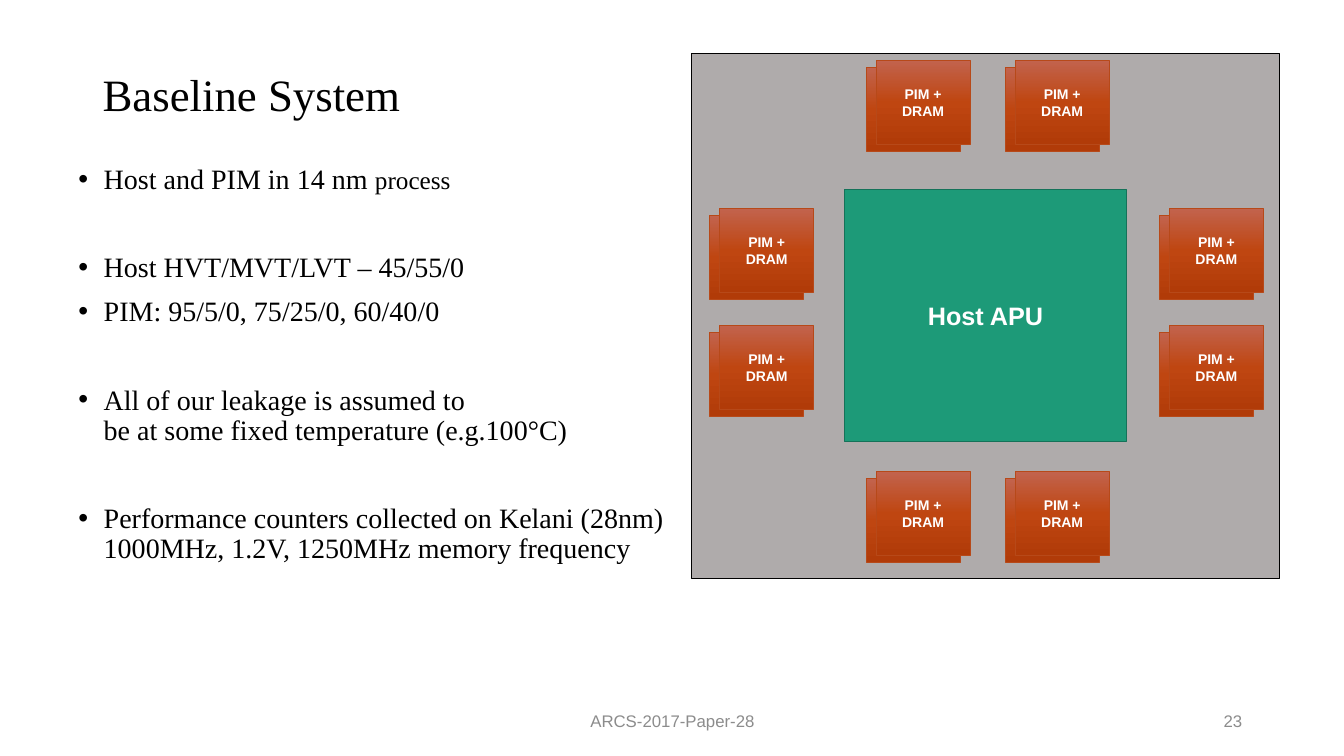
from copy import deepcopy
from itertools import product

from pptx import Presentation
from pptx.dml.color import RGBColor
from pptx.enum.shapes import MSO_SHAPE
from pptx.enum.text import MSO_ANCHOR, PP_ALIGN
from pptx.oxml.ns import qn
from pptx.oxml.xmlchemy import OxmlElement
from pptx.util import Inches, Pt

BLACK = RGBColor(0x00, 0x00, 0x00)
WHITE = RGBColor(0xFF, 0xFF, 0xFF)
GRAY = RGBColor(0x8C, 0x8C, 0x8C)
PANEL = RGBColor(0xAF, 0xAB, 0xAB)
GREEN = RGBColor(0x1D, 0x9A, 0x78)
PINE = RGBColor(0x15, 0x72, 0x59)
RUST = RGBColor(0xB7, 0x49, 0x19)
FADE = [
    (0, RGBColor(0xC2, 0x63, 0x4D)),
    (0.5, RGBColor(0xBF, 0x46, 0x11)),
    (1, RGBColor(0xB1, 0x3B, 0x08)),
]
SERIF, SANS = "Times New Roman", "Arial"
PAGE = (0, 0, Inches(13.33), Inches(7.5))
GAP, BREAK = 10, 41.4  # space before a bullet, and before a new group

# Each bullet: space before, then lines of (text, size) runs
BULLETS = [
    (GAP, [[("Host and PIM in 14 nm ", 20), ("process", 18)]]),
    (BREAK, [[("Host HVT/MVT/LVT – 45/55/0", 20)]]),
    (GAP, [[("PIM: 95/5/0, 75/25/0, 60/40/0", 20)]]),
    (BREAK, [[("All of our leakage is assumed to", 20)],
             [("be at some fixed temperature (e.g.100°C)", 20)]]),
    (BREAK, [[("Performance counters collected on Kelani (28nm)", 20)],
             [("1000MHz, 1.2V, 1250MHz memory frequency", 20)]]),
]

# Card corners in percent of the panel
CARDS = [
    *product((31.4, 55.06), (1.34, 79.65)),
    *product((4.8, 81.3), (29.56, 51.82)),
]
CARD_W, CARD_H = 15.95, 15.93
SHIFT_X, SHIFT_Y = -1.7, 1.34


def part(box, x, y, w, h):
    """Return the part of a box given in percent of its size."""
    left, top, width, height = box
    return (int(left + width * x / 100), int(top + height * y / 100),
            int(width * w / 100), int(height * h / 100))


def add_run(para, text, size, font, color, bold=False):
    run = para.add_run()
    run.text = text
    run.font.size = Pt(size)
    run.font.name = font
    run.font.bold = bold
    run.font.color.rgb = color


def add_box(slide, box, anchor=MSO_ANCHOR.MIDDLE):
    """Add a wrapping text box and return its frame."""
    frame = slide.shapes.add_textbox(*box).text_frame
    frame.word_wrap = True
    frame.vertical_anchor = anchor
    return frame


def add_label(slide, box, text, size, font, color, align):
    para = add_box(slide, box).paragraphs[0]
    para.alignment = align
    para.line_spacing = 0.9 if font == SERIF else 1.0
    add_run(para, text, size, font, color)


def add_dot(para):
    """Give a paragraph a hanging bullet."""
    props = para._p.get_or_add_pPr()
    props.set("marL", str(Inches(0.25)))
    props.set("indent", str(-Inches(0.25)))
    font = OxmlElement("a:buFont")
    font.set("typeface", SANS)
    dot = OxmlElement("a:buChar")
    dot.set("char", "•")
    props.extend([font, dot])


def add_list(slide, box):
    frame = add_box(slide, box, MSO_ANCHOR.TOP)
    for num, (space, lines) in enumerate(BULLETS):
        para = frame.add_paragraph() if num else frame.paragraphs[0]
        para.line_spacing = 0.9
        para.space_before = Pt(space)
        add_dot(para)
        for row, runs in enumerate(lines):
            if row:
                para.add_line_break()
            for text, size in runs:
                add_run(para, text, size, SERIF, BLACK)


def add_rect(slide, box, line, width, fill=None):
    """Add a rectangle, faded in rust when no fill is given."""
    rect = slide.shapes.add_shape(MSO_SHAPE.RECTANGLE, *box)
    rect.shadow.inherit = False
    rect.line.color.rgb = line
    rect.line.width = Pt(width)
    if fill is not None:
        rect.fill.solid()
        rect.fill.fore_color.rgb = fill
        return rect
    rect.fill.gradient()
    rect.fill.gradient_angle = 270
    stops = next(rect.element.spPr.iter(qn("a:gsLst")))
    stops.append(deepcopy(stops[0]))
    for stop, (place, color) in zip(rect.fill.gradient_stops, FADE):
        stop.position = place
        stop.color.rgb = color
    return rect


def add_name(rect, lines, size):
    """Write centred white lines on a rectangle."""
    frame = rect.text_frame
    frame.word_wrap = True
    frame.vertical_anchor = MSO_ANCHOR.MIDDLE
    frame.margin_left = frame.margin_right = Inches(0.2)
    for num, text in enumerate(lines):
        para = frame.add_paragraph() if num else frame.paragraphs[0]
        para.alignment = PP_ALIGN.CENTER
        add_run(para, text, size, SANS, WHITE, True)


def add_chip(slide, box):
    """Draw the host with its ring of stacked memory cards."""
    add_rect(slide, box, BLACK, 1, PANEL)
    for x, y in CARDS:
        back = part(box, x + SHIFT_X, y + SHIFT_Y, CARD_W, CARD_H)
        add_rect(slide, back, RUST, 0.5)
        front = part(box, x, y, CARD_W, CARD_H)
        add_name(add_rect(slide, front, RUST, 0.5), ["PIM +", "DRAM"], 10)
    host = add_rect(slide, part(box, 26, 25.9, 48, 48), PINE, 1, GREEN)
    add_name(host, ["Host APU"], 18)


def add_foot(slide, box):
    add_label(slide, part(box, 33.16, 0, 33.76, 100), "ARCS-2017-Paper-28",
              12, SANS, GRAY, PP_ALIGN.CENTER)
    add_label(slide, part(box, 70.67, 0, 22.5, 100), "23",
              12, SANS, GRAY, PP_ALIGN.RIGHT)


def main():
    deck = Presentation()
    deck.slide_width, deck.slide_height = PAGE[2:]
    slide = deck.slides.add_slide(deck.slide_layouts[6])
    add_label(slide, part(PAGE, 6.9, 5.33, 40.66, 14.93), "Baseline System",
              32, SERIF, BLACK, PP_ALIGN.LEFT)
    add_list(slide, part(PAGE, 5.1, 21.2, 46.59, 60.53))
    add_chip(slide, part(PAGE, 51.46, 7.07, 43.74, 69.47))
    add_foot(slide, part(PAGE, 0, 92.67, 100, 5.33))
    deck.save("out.pptx")


if __name__ == "__main__":
    main()
